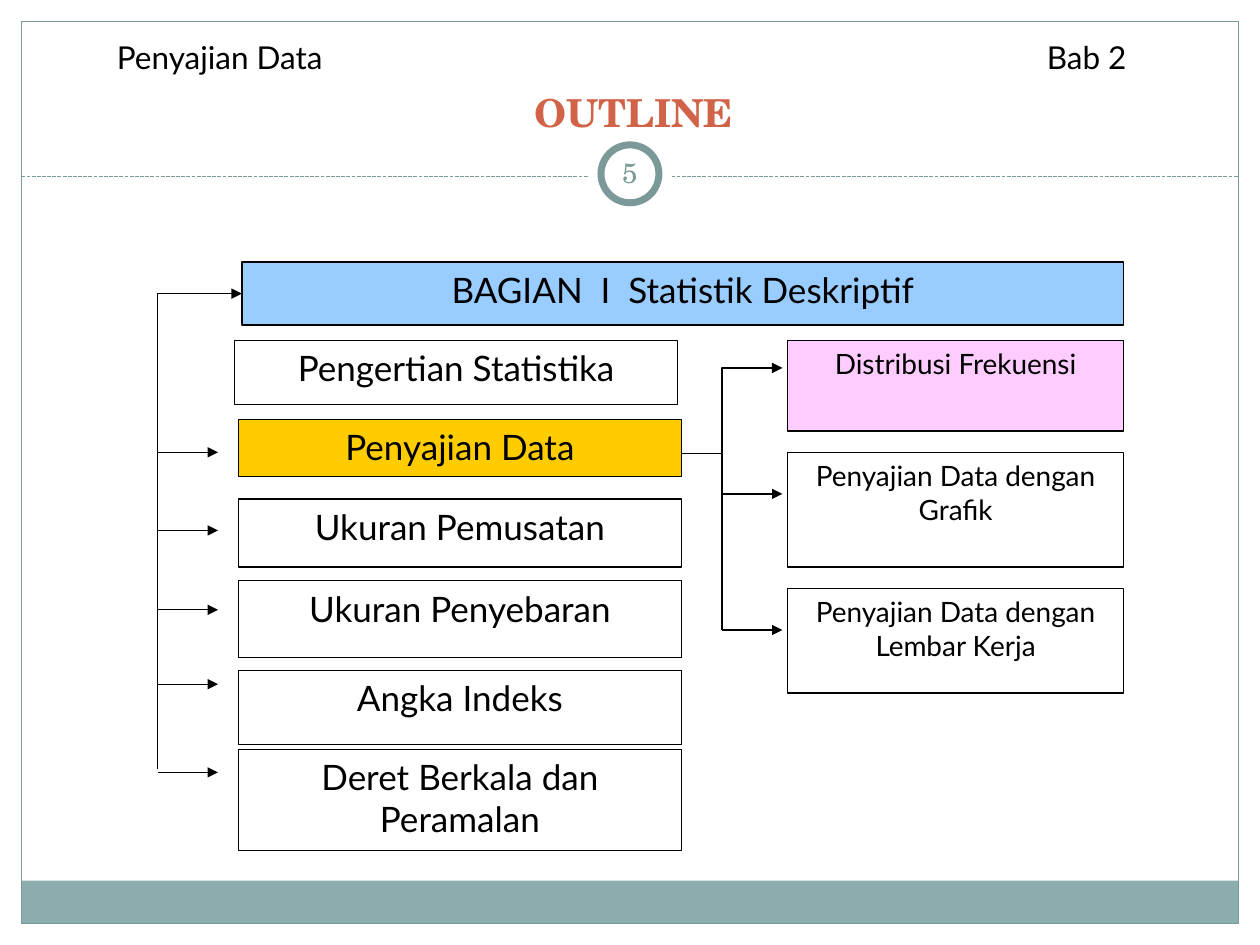
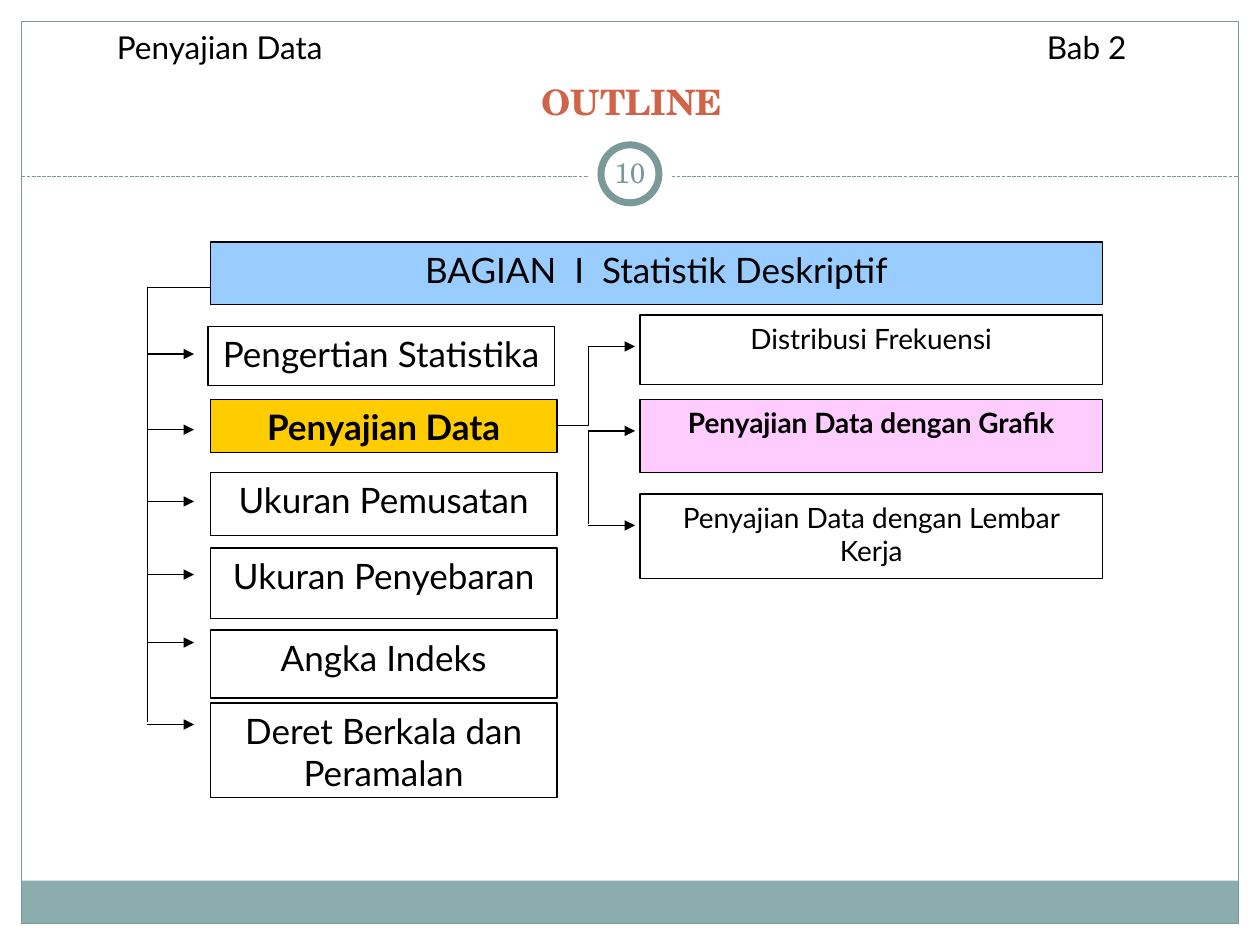
from dataclasses import dataclass

from lxml import etree
from pptx import Presentation
from pptx import util as u
from pptx.dml.color import RGBColor
from pptx.enum import dml, shapes, text
from pptx.oxml.ns import qn


@dataclass(frozen=True)
class Theme:
    white: str = "FFFFFF"
    black: str = "000000"
    frame: str = "7C999A"
    band: str = "8CADAE"
    title: str = "D16349"
    heading: str = "99CCFF"
    chapter: str = "FFCC00"
    topic: str = "FFCCFF"
    body_font: str = "Lato"
    title_font: str = "TeX Gyre Schola"
    number_size: int = 16
    topic_size: int = 16
    header_size: int = 18
    chapter_size: int = 20
    thin: float = 0.75
    ring: float = 4


@dataclass(frozen=True)
class Row:
    label: str
    top: float
    height: float
    arrow: float | None
    indent: float = 0


@dataclass(frozen=True)
class Outline:
    number: str
    header_top: float
    title_box: tuple
    title_size: int
    box: tuple
    heading_left: float
    heading_width: float
    heading_arrow: bool
    trunk: tuple
    reach: float
    chapter_left: float
    chapter_width: float
    chapters: tuple
    topic_left: float
    topic_width: float
    topics: tuple
    fork: float
    fork_start: float
    stem: tuple
    active_topic: str
    bold_active: bool


THEME = Theme()
ACTIVE_CHAPTER = "Penyajian Data"
TOPIC_GAP = 0.04


def color(value):
    return RGBColor.from_string(value)


def write(shape, content, *, size, font=THEME.body_font, ink=THEME.black, bold=False,
          align=text.PP_ALIGN.CENTER, anchor=text.MSO_ANCHOR.TOP, margin=None):
    frame = shape.text_frame
    frame.word_wrap = True
    frame.vertical_anchor = anchor
    if margin is not None:
        frame.margin_left = frame.margin_right = u.Inches(margin)
        frame.margin_top = frame.margin_bottom = u.Inches(margin)
    frame.text = content
    for paragraph in frame.paragraphs:
        paragraph.alignment = align
        for run in paragraph.runs:
            run.font.name = font
            run.font.size = u.Pt(size)
            run.font.bold = bold
            run.font.color.rgb = color(ink)


def add_text(slide, box, content, **style):
    shape = slide.shapes.add_textbox(*map(u.Inches, box))
    write(shape, content, **style)
    return shape


def add_shape(slide, kind, box, fill=None, line=None, width=THEME.thin):
    shape = slide.shapes.add_shape(kind, *map(u.Inches, box))
    shape.shadow.inherit = False
    if fill:
        shape.fill.solid()
        shape.fill.fore_color.rgb = color(fill)
    else:
        shape.fill.background()
    if line:
        shape.line.color.rgb = color(line)
        shape.line.width = u.Pt(width)
    else:
        shape.line.fill.background()
    return shape


def add_label(slide, box, content, fill, **style):
    shape = add_shape(slide, shapes.MSO_SHAPE.RECTANGLE, box, fill, THEME.black)
    write(shape, content, **style)


def finish_line(shape, ink, arrow):
    shape.line.color.rgb = color(ink)
    shape.line.width = u.Pt(THEME.thin)
    if arrow:
        outline = shape._element.spPr.find(qn("a:ln"))
        etree.SubElement(outline, qn("a:tailEnd"), type="triangle")


def add_line(slide, start, end, ink=THEME.black, arrow=False):
    connector = slide.shapes.add_connector(
        shapes.MSO_CONNECTOR.STRAIGHT, *map(u.Inches, (*start, *end)))
    finish_line(connector, ink, arrow)
    etree.SubElement(connector._element.spPr, qn("a:effectLst"))
    return connector


def add_bent_line(slide, points, arrow=False):
    first, *others = [tuple(map(u.Inches, point)) for point in points]
    builder = slide.shapes.build_freeform(*first)
    builder.add_line_segments(others, close=False)
    shape = builder.convert_to_shape()
    shape.shadow.inherit = False
    shape.fill.background()
    finish_line(shape, THEME.black, arrow)


def draw_frame(slide, box, number):
    left, top, width, height = box
    right, middle = left + width, left + width / 2
    rule = top + 1.23
    badge = top + 1.21
    add_shape(slide, shapes.MSO_SHAPE.RECTANGLE,
              (left, top + height - 0.34, width, 0.34), THEME.band)
    add_shape(slide, shapes.MSO_SHAPE.RECTANGLE, box, line=THEME.frame)
    line = add_line(slide, (left, rule), (right, rule), THEME.frame)
    line.line.dash_style = dml.MSO_LINE.SQUARE_DOT
    for size, outline in ((0.67, None), (0.46, THEME.frame)):
        add_shape(slide, shapes.MSO_SHAPE.OVAL,
                  (middle - size / 2, badge - size / 2, size, size),
                  THEME.white, outline, THEME.ring)
    add_text(slide, (middle - 0.25, badge - 0.25, 0.5, 0.48), number,
             size=THEME.number_size, font=THEME.title_font, ink=THEME.frame,
             anchor=text.MSO_ANCHOR.MIDDLE, margin=0.05)


def draw_header(slide, box):
    header = add_text(slide, box, "Penyajian Data\tBab 2", size=THEME.header_size,
                      align=text.PP_ALIGN.LEFT)
    properties = header.text_frame.paragraphs[0]._p.get_or_add_pPr()
    stops = etree.SubElement(properties, qn("a:tabLst"))
    etree.SubElement(stops, qn("a:tab"), pos=str(u.Inches(7.38)), algn="l")


def draw_chapters(slide, box, outline):
    left, top = box
    start, end = (top + y for y in outline.trunk)
    heading = left + outline.heading_left
    add_label(slide, (heading, top, outline.heading_width, 0.5),
              "BAGIAN  I  Statistik Deskriptif", THEME.heading, size=THEME.chapter_size)
    add_bent_line(slide, [(left + outline.chapter_left, start), (left, start), (left, end)])
    if outline.heading_arrow:
        add_line(slide, (left, start), (heading, start), arrow=True)
    for row in outline.chapters:
        active = row.label == ACTIVE_CHAPTER
        add_label(slide, (left + outline.chapter_left + row.indent, top + row.top,
                          outline.chapter_width, row.height), row.label,
                  THEME.chapter if active else THEME.white,
                  size=THEME.chapter_size, bold=active and outline.bold_active)
        if row.arrow is not None:
            y = top + row.arrow
            add_line(slide, (left, y), (left + outline.reach, y), arrow=True)


def draw_topics(slide, box, outline):
    left, top = box
    topic_left = left + outline.topic_left
    chapter_right = left + outline.chapter_left + outline.chapter_width
    fork, tip = left + outline.fork, topic_left - TOPIC_GAP
    for row in outline.topics:
        active = row.label == outline.active_topic
        add_label(slide, (topic_left, top + row.top, outline.topic_width, row.height),
                  row.label, THEME.topic if active else THEME.white,
                  size=THEME.topic_size, bold=active and outline.bold_active)
    first, *others = [top + row.arrow for row in outline.topics]
    start = top + outline.fork_start
    add_bent_line(slide, [(chapter_right, start), (fork, start), (fork, first), (tip, first)],
                  arrow=True)
    for y in others:
        add_line(slide, (fork, y), (tip, y), arrow=True)
    add_line(slide, *((fork, top + y) for y in outline.stem))


def draw_outline_slide(presentation, outline):
    slide = presentation.slides.add_slide(presentation.slide_layouts[6])
    draw_frame(slide, (0.17, 0.17, 9.66, 7.16), outline.number)
    add_text(slide, outline.title_box, "OUTLINE", size=outline.title_size,
             font=THEME.title_font, ink=THEME.title, bold=True,
             anchor=text.MSO_ANCHOR.BOTTOM)
    draw_chapters(slide, outline.box, outline)
    draw_topics(slide, outline.box, outline)
    draw_header(slide, (0.83, outline.header_top, 8.33, 0.4))


CHAPTERS = ("Pengertian Statistika", ACTIVE_CHAPTER, "Ukuran Pemusatan",
            "Ukuran Penyebaran", "Angka Indeks", "Deret Berkala dan\nPeramalan")
TOPICS = ("Distribusi Frekuensi", "Penyajian Data dengan Grafik",
          "Penyajian Data dengan Lembar Kerja")


def rows(labels, *places):
    return tuple(Row(label, *place) for label, place in zip(labels, places))


OUTLINES = (
    Outline(
        number="5", header_top=0.25, title_box=(1.92, 0.3, 6.22, 0.82), title_size=22,
        box=(1.25, 2.08), heading_left=0.67, heading_width=7, heading_arrow=True,
        trunk=(0.25, 4.02), reach=0.48, chapter_left=0.64, chapter_width=3.52,
        chapters=rows(CHAPTERS, (0.62, 0.51, None, -0.03), (1.25, 0.45, 1.51),
                      (1.88, 0.54, 2.13), (2.53, 0.61, 2.76),
                      (3.24, 0.59, 3.35), (3.87, 0.8, 4.05)),
        topic_left=5, topic_width=2.67,
        topics=rows(TOPICS, (0.62, 0.72, 0.84), (1.51, 0.91, 1.84), (2.59, 0.83, 2.92)),
        fork=4.48, fork_start=1.52, stem=(1.43, 2.92),
        active_topic=TOPICS[0], bold_active=False),
    Outline(
        number="10", header_top=0.17, title_box=(1.94, 0.3, 6.15, 0.72), title_size=20,
        box=(1.17, 1.92), heading_left=0.5, heading_width=7.08, heading_arrow=False,
        trunk=(0.36, 3.81), reach=0.37, chapter_left=0.5, chapter_width=2.75,
        chapters=rows(CHAPTERS, (0.67, 0.47, 0.89, -0.02), (1.25, 0.42, 1.49),
                      (1.83, 0.5, 2.06), (2.43, 0.56, 2.64),
                      (3.08, 0.54, 3.18), (3.66, 0.75, 3.83)),
        topic_left=3.91, topic_width=3.67,
        topics=rows(TOPICS, (0.58, 0.55, 0.83), (1.25, 0.58, 1.5), (2, 0.67, 2.25)),
        fork=3.5, fork_start=1.46, stem=(1.5, 2.24),
        active_topic=TOPICS[1], bold_active=True),
)


def main():
    presentation = Presentation()
    presentation.slide_width = u.Inches(10)
    presentation.slide_height = u.Inches(7.5)
    for outline in OUTLINES:
        draw_outline_slide(presentation, outline)
    presentation.save("out.pptx")


if __name__ == "__main__":
    main()
